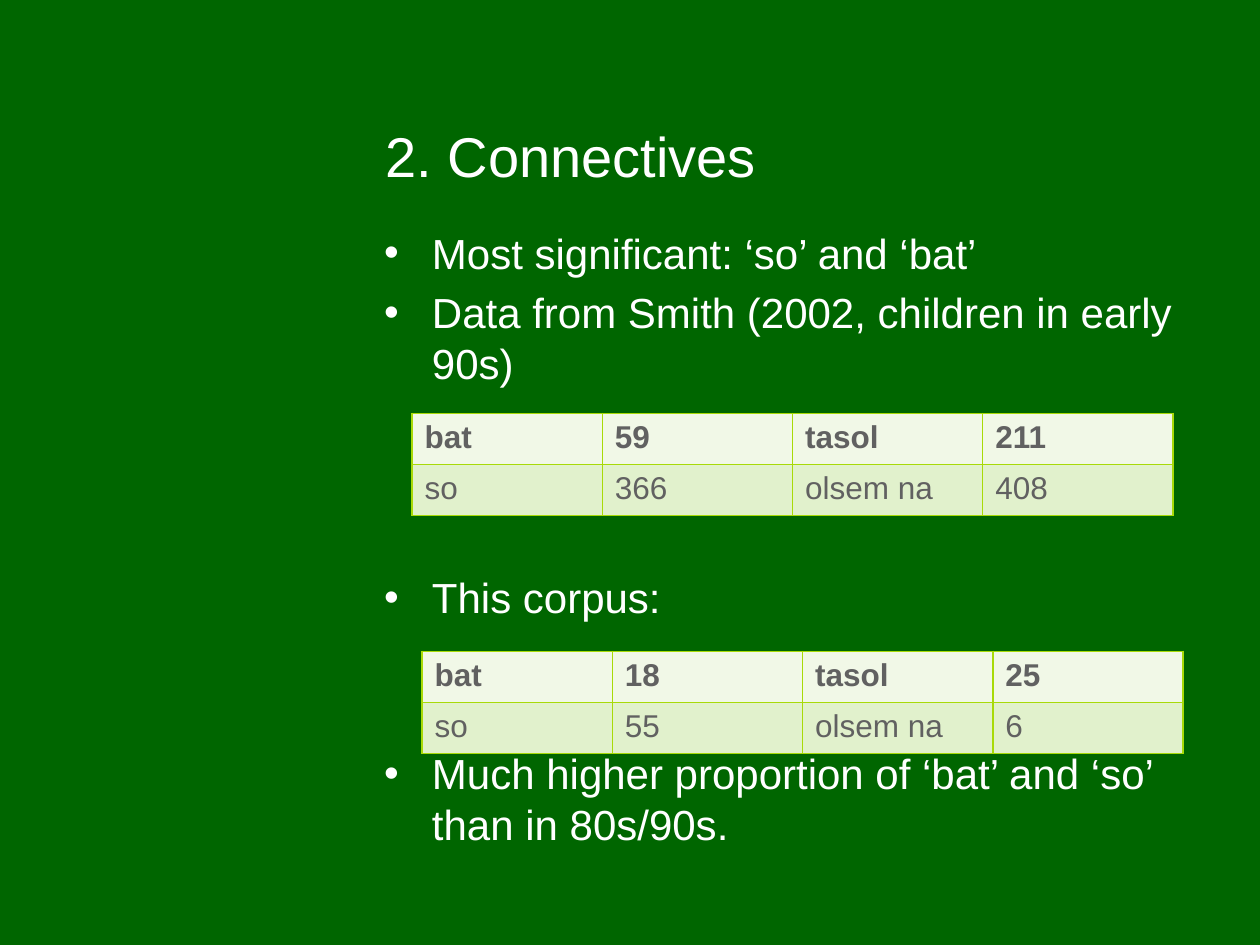
import pptx
import pptx.util
import pptx.dml.color
import pptx.enum.text
import pptx.oxml
import pptx.oxml.ns
import lxml.etree

Inches = pptx.util.Inches
Pt = pptx.util.Pt


def color(hex_value):
    return pptx.dml.color.RGBColor.from_string(hex_value)


def add_text(paragraph, text, size, hex_value, bold=False):
    run = paragraph.add_run()
    run.text = text
    run.font.name = "Arial"
    run.font.size = Pt(size)
    run.font.bold = bold
    run.font.color.rgb = color(hex_value)


presentation = pptx.Presentation()
presentation.slide_width = Inches(10)
presentation.slide_height = Inches(7.5)
slide = presentation.slides.add_slide(presentation.slide_layouts[5])
slide.background.fill.solid()
slide.background.fill.fore_color.rgb = color("006600")

title = slide.shapes.title
title.left, title.top = Inches(2.96), Inches(0.3)
title.width, title.height = Inches(6.91), Inches(1.25)
title.text_frame.vertical_anchor = pptx.enum.text.MSO_ANCHOR.BOTTOM
title_paragraph = title.text_frame.paragraphs[0]
title_paragraph.alignment = pptx.enum.text.PP_ALIGN.LEFT
add_text(title_paragraph, "2. Connectives", 32, "FFFFFF")

body = slide.shapes.add_textbox(Inches(2.95), Inches(1.75), Inches(6.92), Inches(5.39))
body.text_frame.word_wrap = True
points = [
    ("Most significant: ‘so’ and ‘bat’", 0),
    ("Data from Smith (2002, children in early 90s)", 5),
    ("This corpus:", 105),
    ("Much higher proportion of ‘bat’ and ‘so’ than in 80s/90s.", 71.5),
]
for index, (text, space_before) in enumerate(points):
    paragraph = body.text_frame.paragraphs[0] if index == 0 else body.text_frame.add_paragraph()
    properties = paragraph._p.get_or_add_pPr()
    properties.set("marL", str(Inches(0.38)))
    properties.set("indent", str(Inches(-0.38)))
    bullet_font = lxml.etree.SubElement(properties, pptx.oxml.ns.qn("a:buFont"))
    bullet_font.set("typeface", "Arial")
    bullet = lxml.etree.SubElement(properties, pptx.oxml.ns.qn("a:buChar"))
    bullet.set("char", "•")
    paragraph.line_spacing = Pt(29)
    paragraph.space_before = Pt(space_before)
    add_text(paragraph, text, 24, "FFFFFF")

tables = [
    (3.27, 3.28, [["bat", "59", "tasol", "211"], ["so", "366", "olsem na", "408"]]),
    (3.35, 5.17, [["bat", "18", "tasol", "25"], ["so", "55", "olsem na", "6"]]),
]
row_fills = ["F1F8E7", "E1F1CC"]
for left, top, rows in tables:
    table = slide.shapes.add_table(
        2, 4, Inches(left), Inches(top), Inches(6.04), Inches(0.81)
    ).table
    for row_index, row in enumerate(rows):
        for column_index, text in enumerate(row):
            cell = table.cell(row_index, column_index)
            cell_properties = cell._tc.get_or_add_tcPr()
            for side in ["lnL", "lnR", "lnT", "lnB"]:
                border = pptx.oxml.parse_xml(
                    f'<a:{side} {pptx.oxml.ns.nsdecls("a")} w="{Pt(1)}"><a:solidFill>'
                    f'<a:srgbClr val="A8DA09"/></a:solidFill></a:{side}>'
                )
                cell_properties.append(border)
            cell.fill.solid()
            cell.fill.fore_color.rgb = color(row_fills[row_index])
            add_text(cell.text_frame.paragraphs[0], text, 18, "616161", row_index == 0)

presentation.save("out.pptx")
